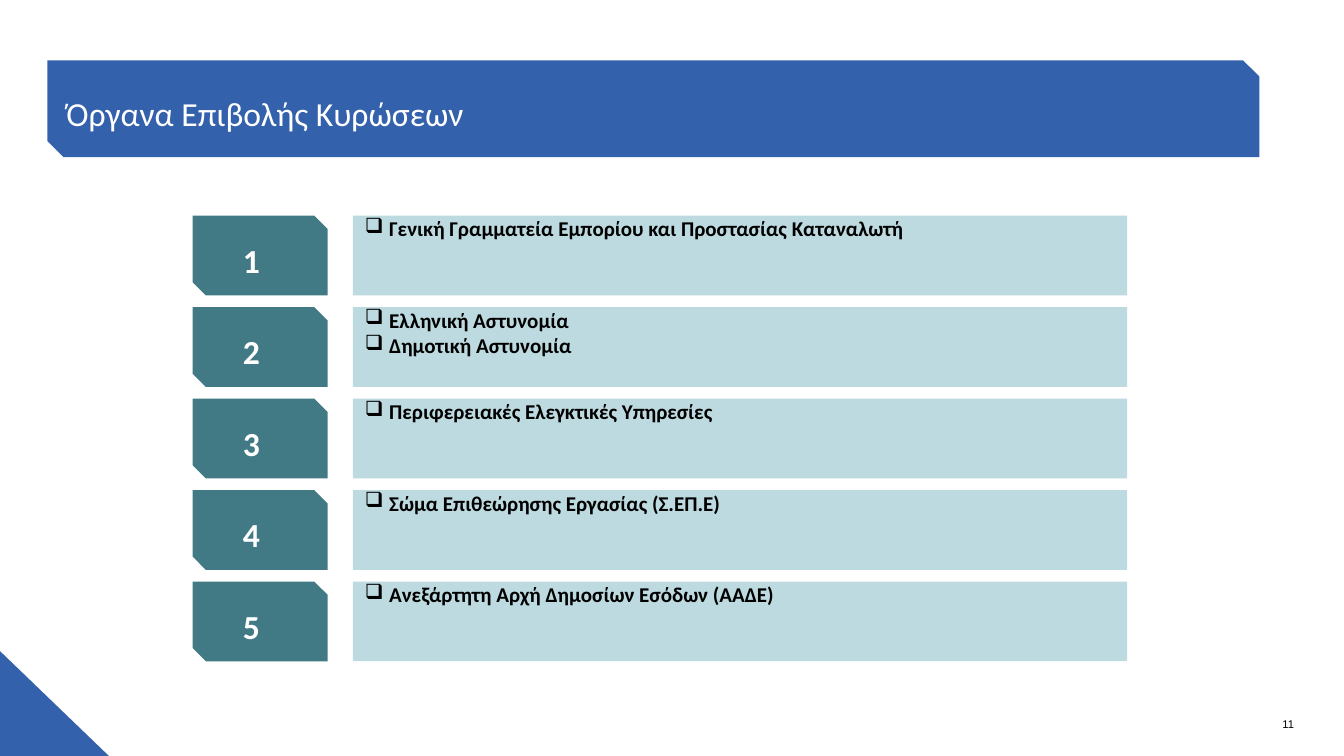
from lxml.etree import SubElement
from pptx import Presentation
from pptx.dml.color import RGBColor
from pptx.enum.shapes import MSO_SHAPE
from pptx.enum.text import MSO_ANCHOR, PP_ALIGN
from pptx.oxml.ns import qn
from pptx.util import Inches, Pt

COLORS = {
    "blue": "3461AB",
    "teal": "417A85",
    "pale": "BCDADF",
    "white": "FFFFFF",
    "black": "000000",
}

AUTHORITIES = [
    ["Γενική Γραμματεία Εμπορίου και Προστασίας Καταναλωτή"],
    ["Ελληνική Αστυνομία", "Δημοτική Αστυνομία"],
    ["Περιφερειακές Ελεγκτικές Υπηρεσίες"],
    ["Σώμα Επιθεώρησης Εργασίας (Σ.ΕΠ.Ε)"],
    ["Ανεξάρτητη Αρχή Δημοσίων Εσόδων (ΑΑΔΕ)"],
]
FIRST_TOP, LAST_TOP = 2.14, 5.77
ROW_STEP = (LAST_TOP - FIRST_TOP) / (len(AUTHORITIES) - 1)
ROW_HEIGHT = 0.79


def write_text(shape, lines, size=15, color="black", bold=False, font="Calibri",
               indent=0.01, hanging=0, bullet=None):
    frame = shape.text_frame
    frame.word_wrap = True
    frame.vertical_anchor = MSO_ANCHOR.TOP
    frame.margin_left = frame.margin_right = 0
    frame.margin_top = frame.margin_bottom = 0
    for index, line in enumerate(lines):
        paragraph = frame.add_paragraph() if index else frame.paragraphs[0]
        paragraph.text = line
        paragraph.alignment = PP_ALIGN.LEFT
        properties = paragraph._p.get_or_add_pPr()
        properties.set("marL", str(Inches(indent)))
        properties.set("indent", str(-Inches(hanging)))
        if bullet:
            SubElement(properties, qn("a:buChar"), char=bullet)
        paragraph.font.size = Pt(size)
        paragraph.font.name = font
        paragraph.font.bold = bold
        paragraph.font.color.rgb = RGBColor.from_string(COLORS[color])


class SlideBuilder:
    def __init__(self, slide, colors):
        self.slide = slide
        self.colors = colors

    def block(self, preset, left, top, width, height, fill):
        shape = self.slide.shapes.add_shape(
            preset, Inches(left), Inches(top), Inches(width), Inches(height))
        shape.shadow.inherit = False
        shape.fill.solid()
        shape.fill.fore_color.rgb = RGBColor.from_string(self.colors[fill])
        shape.line.fill.background()
        return shape

    def label(self, text, left, top, width, height, **text_format):
        box = self.slide.shapes.add_textbox(
            Inches(left), Inches(top), Inches(width), Inches(height))
        write_text(box, [text], **text_format)

    def authority_row(self, number, lines, top):
        card = self.block(MSO_SHAPE.RECTANGLE, 3.5, top, 7.68, ROW_HEIGHT, "pale")
        write_text(card, lines, bold=True, indent=0.36, hanging=0.24, bullet="❑")
        self.block(MSO_SHAPE.SNIP_2_DIAG_RECTANGLE, 1.91, top, 1.34, ROW_HEIGHT, "teal")
        self.label(str(number), 2.4, top + 0.24, 0.2, 0.36,
                   size=24, color="white", bold=True)


def main():
    presentation = Presentation()
    presentation.slide_width = Inches(13.33)
    presentation.slide_height = Inches(7.5)
    slide = presentation.slides.add_slide(presentation.slide_layouts[6])
    builder = SlideBuilder(slide, COLORS)

    builder.block(MSO_SHAPE.RIGHT_TRIANGLE, 0, 6.46, 1.08, 1.04, "blue")
    builder.block(MSO_SHAPE.SNIP_2_DIAG_RECTANGLE, 0.47, 0.6, 12.02, 0.96, "blue")
    builder.label("Όργανα Επιβολής Κυρώσεων", 0.65, 0.92, 12.03, 0.36,
                  size=24, color="white")
    for index, lines in enumerate(AUTHORITIES):
        builder.authority_row(index + 1, lines, FIRST_TOP + index * ROW_STEP)
    builder.label("11", 12.71, 7.12, 0.15, 0.14, size=8, font="Arial")

    presentation.save("out.pptx")


if __name__ == "__main__":
    main()
